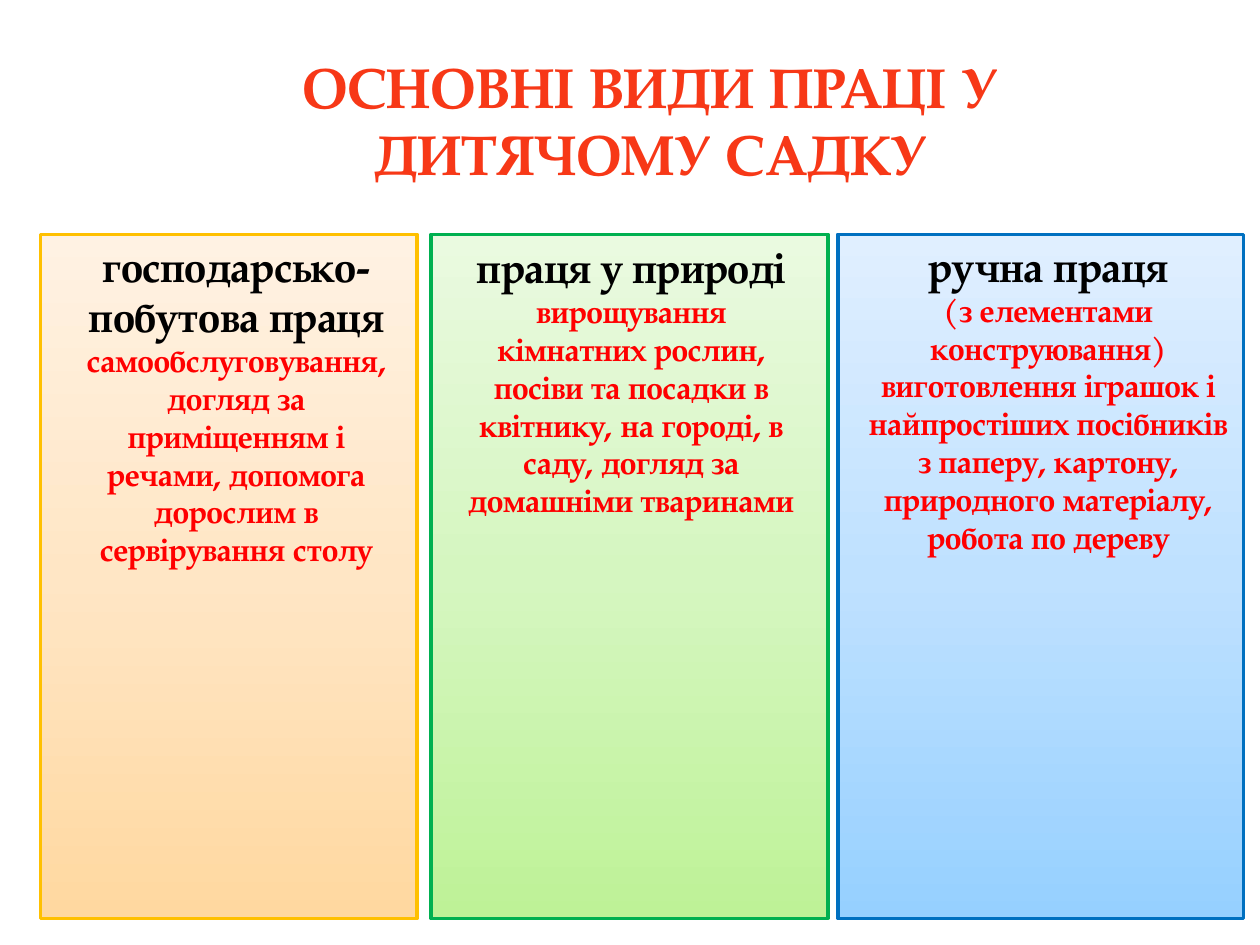
from copy import deepcopy

from pptx import Presentation
from pptx.dml.color import RGBColor
from pptx.enum.shapes import MSO_SHAPE as Shape
from pptx.enum.text import MSO_ANCHOR as Anchor, PP_ALIGN as Align
from pptx.oxml.ns import qn
from pptx.util import Inches, Pt

FONT = "TeX Gyre Pagella"
HEADING = (24, "000000")
DETAIL = (18, "FF0000")
CARD_TOP, CARD_HEIGHT = 1.86, 5.43


def color(value):
    """Turn a hex string into a colour."""
    return RGBColor.from_string(value)


def set_gradient(fill, properties, stops, angle):
    """Fill with (position, colour) stops along a counter-clockwise angle."""
    fill.gradient()
    fill.gradient_angle = angle
    stop_list = properties.find(".//" + qn("a:gsLst"))
    while len(stop_list) < len(stops):
        stop_list.append(deepcopy(stop_list[0]))
    for stop, (position, value) in zip(fill.gradient_stops, stops):
        stop.position = position
        stop.color.rgb = color(value)


def add_run(paragraph, text, size):
    """Add a bold run in the slide font."""
    run = paragraph.add_run()
    run.text = text
    run.font.name = FONT
    run.font.size = Pt(size)
    run.font.bold = True
    return run


def write_paragraphs(frame, paragraphs, indent=0):
    """Write centred paragraphs, each a list of (text, style) runs."""
    frame.word_wrap = True
    for index, runs in enumerate(paragraphs):
        paragraph = frame.add_paragraph() if index else frame.paragraphs[0]
        paragraph.alignment = Align.CENTER
        if indent:
            properties = paragraph._p.get_or_add_pPr()
            properties.set("marL", str(Inches(indent)))
            properties.set("indent", "0")
        for text, (size, value) in runs:
            add_run(paragraph, text, size).font.color.rgb = color(value)


def add_title(slide, left, top, width, height):
    """Place the slide title in its box."""
    box = slide.shapes.add_textbox(*map(Inches, (left, top, width, height)))
    frame = box.text_frame
    frame.word_wrap = True
    frame.vertical_anchor = Anchor.MIDDLE
    paragraph = frame.paragraphs[0]
    paragraph.alignment = Align.CENTER
    run = add_run(paragraph, "ОСНОВНІ ВИДИ ПРАЦІ У ДИТЯЧОМУ САДКУ", 32)
    properties = run._r.get_or_add_rPr()
    properties.set("spc", "50")
    set_gradient(run.font.fill, properties, [(0.25, "F73817"), (1, "B3240B")], 270)


def add_card(slide, left, width, shades, border):
    """Place a gradient card in the row and return it."""
    box = map(Inches, (left, CARD_TOP, width, CARD_HEIGHT))
    card = slide.shapes.add_shape(Shape.RECTANGLE, *box)
    card.shadow.inherit = False
    set_gradient(card.fill, card._element.spPr, list(zip((0, 0.5, 1), shades)), 90)
    card.line.color.rgb = color(border)
    card.line.width = Pt(2)
    card.text_frame.vertical_anchor = Anchor.TOP
    return card


def add_household_card(slide, left, width):
    """Place the household work card."""
    card = add_card(slide, left, width, ("FFD8A0", "FFE6C5", "FFF2E3"), "FFC000")
    write_paragraphs(card.text_frame, [[
        ("господарсько-побутова праця ", HEADING),
        ("самообслуговування, догляд за приміщенням і речами, "
         "допомога дорослим в сервірування столу", DETAIL),
    ]], 0.12)


def add_nature_card(slide, left, width):
    """Place the nature work card with its text box."""
    add_card(slide, left, width, ("BEF297", "D5F6C0", "EAFAE0"), "00B050")
    box = map(Inches, (left + 0.12, CARD_TOP + 0.01, width - 0.21, 2.73))
    write_paragraphs(slide.shapes.add_textbox(*box).text_frame, [
        [("праця у природі", HEADING)],
        [("вирощування кімнатних рослин, посіви та посадки в квітнику, "
          "на городі, в саду, догляд за домашніми тваринами", DETAIL)],
    ])


def add_handwork_card(slide, left, width):
    """Place the handwork card."""
    card = add_card(slide, left, width, ("96D0FF", "BFE1FF", "E0EFFF"), "0070C0")
    write_paragraphs(card.text_frame, [
        [("ручна праця", HEADING)],
        [("(з елементами конструювання)", DETAIL)],
        [("виготовлення іграшок і найпростіших посібників з паперу, картону, "
          "природного матеріалу, робота по дереву", DETAIL)],
    ], 0.12)


def main():
    """Build and save the slide."""
    presentation = Presentation()
    presentation.slide_width = Inches(10)
    presentation.slide_height = Inches(7.5)
    slide = presentation.slides.add_slide(presentation.slide_layouts[6])
    add_household_card(slide, 0.32, 2.99)
    add_handwork_card(slide, 6.65, 3.22)
    add_title(slide, 1.22, 0.36, 7.89, 1.18)
    add_nature_card(slide, 3.42, 3.15)
    presentation.save("out.pptx")


if __name__ == "__main__":
    main()
